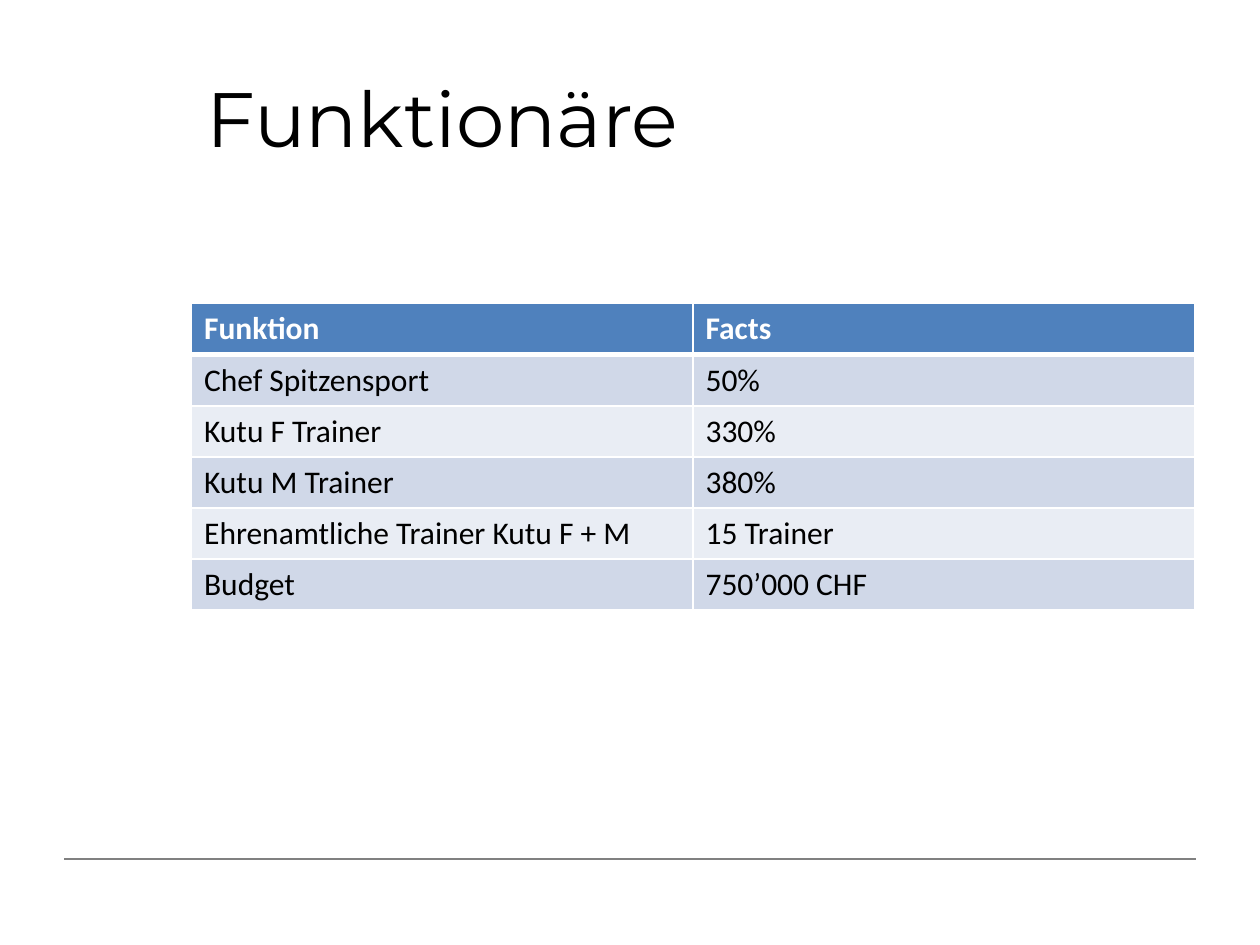
"""Build the Funktionäre slide with its table of functions and facts."""
from typing import NamedTuple

from lxml import etree
from pptx import Presentation
from pptx import util as u
from pptx.dml.color import RGBColor
from pptx.enum import shapes, text
from pptx.oxml import ns

BLACK = RGBColor(0x00, 0x00, 0x00)
WHITE = RGBColor(0xFF, 0xFF, 0xFF)
GREY = RGBColor(0x80, 0x80, 0x80)
BLUE = RGBColor(0x4F, 0x81, 0xBD)
BANDS = (RGBColor(0xD0, 0xD8, 0xE8), RGBColor(0xE9, 0xED, 0xF4))


class Entry(NamedTuple):
    function: str
    facts: str


ENTRIES = [
    Entry("Funktion", "Facts"),
    Entry("Chef Spitzensport", "50%"),
    Entry("Kutu F Trainer", "330%"),
    Entry("Kutu M Trainer", "380%"),
    Entry("Ehrenamtliche Trainer Kutu F + M", "15 Trainer"),
    Entry("Budget", "750’000 CHF"),
]


def set_attrs(obj, values: dict) -> None:
    for name, value in values.items():
        setattr(obj, name, value)


def write(p, content: str, color: RGBColor, **font) -> None:
    r = p.add_run()
    r.text = content
    set_attrs(r.font, font)
    r.font.color.rgb = color


def set_borders(cell, widths: dict[str, int]) -> None:
    tc_pr = cell._tc.get_or_add_tcPr()
    for side, width in widths.items():
        ln = etree.SubElement(tc_pr, ns.qn(f"a:ln{side}"), w=str(u.Pt(width)))
        fill = etree.SubElement(ln, ns.qn("a:solidFill"))
        etree.SubElement(fill, ns.qn("a:srgbClr"), val=str(WHITE))


def add_rule(s) -> None:
    y = u.Inches(6.82)
    line = s.shapes.add_connector(
        shapes.MSO_CONNECTOR.STRAIGHT, u.Inches(0.51), y, u.Inches(9.49), y)
    line.line.color.rgb = GREY
    line.line.width = u.Pt(1)
    etree.SubElement(line._element.spPr, ns.qn("a:effectLst"))


def add_title(s, content: str) -> None:
    sp = s.shapes.title
    set_attrs(sp, {"left": u.Inches(1.54), "top": u.Inches(0.3),
                   "width": u.Inches(7.96), "height": u.Inches(1.25)})
    tf = sp.text_frame
    tf.vertical_anchor = text.MSO_ANCHOR.MIDDLE
    p = tf.paragraphs[0]
    p.alignment = text.PP_ALIGN.LEFT
    write(p, content, BLACK, size=u.Pt(44), name="Montserrat")


def add_entries(s, entries: list[Entry]) -> None:
    table = s.shapes.add_table(
        len(entries), len(Entry._fields), u.Inches(1.52), u.Inches(2.41),
        u.Inches(7.96), u.Inches(2.43)).table
    for i, entry in enumerate(entries):
        header = i == 0
        for j, content in enumerate(entry):
            cell = table.cell(i, j)
            set_borders(cell, {"L": 1, "R": 1, "T": 3 if i == 1 else 1,
                               "B": 3 if header else 1})
            cell.fill.solid()
            cell.fill.fore_color.rgb = BLUE if header else BANDS[(i - 1) % 2]
            write(cell.text_frame.paragraphs[0], content,
                  WHITE if header else BLACK,
                  size=u.Pt(18), name="Calibri", bold=header)


def main() -> None:
    prs = Presentation()
    set_attrs(prs, {"slide_width": u.Inches(10), "slide_height": u.Inches(7.5)})
    s = prs.slides.add_slide(prs.slide_layouts[5])
    add_rule(s)
    add_title(s, "Funktionäre")
    add_entries(s, ENTRIES)
    prs.save("out.pptx")


if __name__ == "__main__":
    main()
